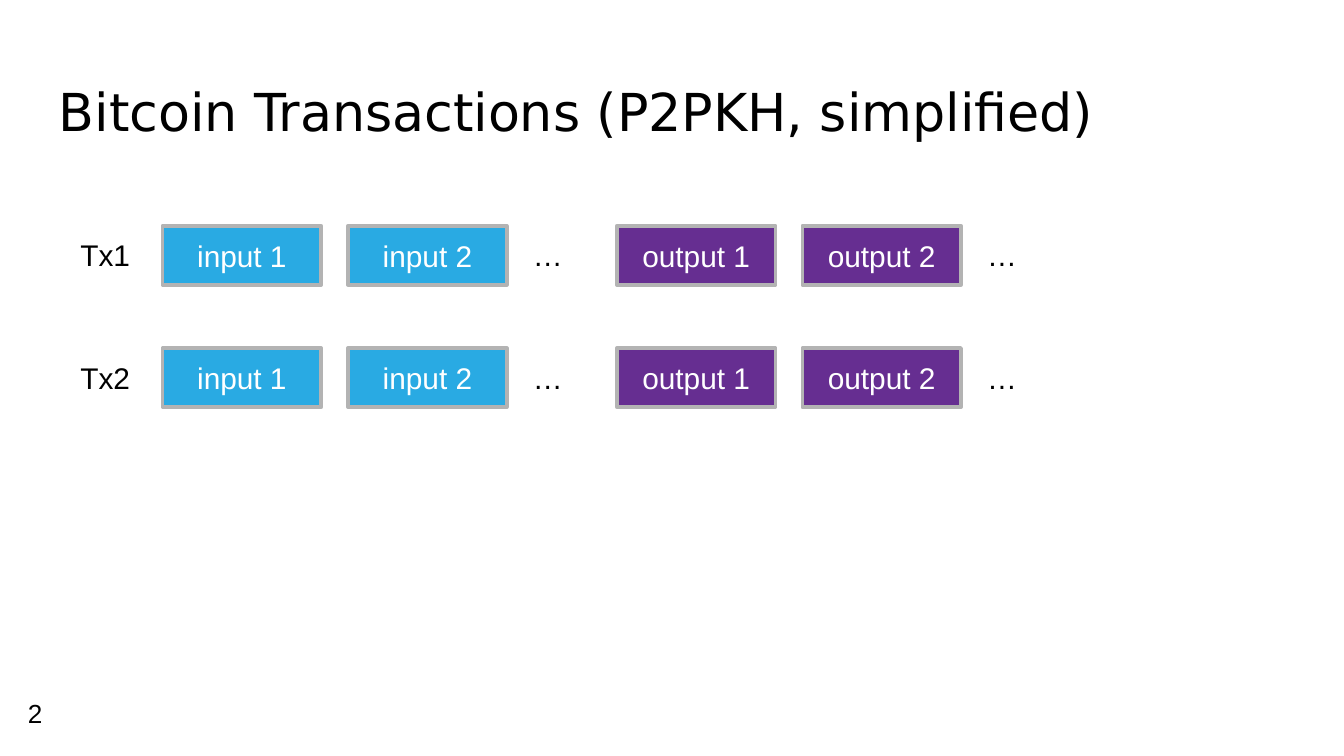
from pptx import Presentation
from pptx import util as u
from pptx.dml.color import RGBColor
from pptx.enum import shapes, text

BLACK = RGBColor(0x00, 0x00, 0x00)
WHITE = RGBColor(0xFF, 0xFF, 0xFF)
BLUE = RGBColor(0x29, 0xAA, 0xE3)
PURPLE = RGBColor(0x66, 0x2E, 0x91)
GREY = RGBColor(0xB3, 0xB3, 0xB3)

# Grid in inches: one row per transaction, one group each for inputs and outputs
ROW_TOP, ROW_STEP = 1.68, 0.91
BOX_WIDTH, BOX_HEIGHT, BOX_STEP = 1.18, 0.44, 1.38
LABEL_LEFT, LABEL_WIDTH, LABEL_HEIGHT = 0.5, 0.61, 0.37
GROUPS = [("input", 1.21, BLUE), ("output", 4.59, PURPLE)]
TRANSACTIONS = ["Tx1", "Tx2"]


def write(shape, words, size=16, font="Arial", color=BLACK,
          align=text.PP_ALIGN.LEFT, anchor=text.MSO_ANCHOR.TOP, inset=None):
    """Put one formatted paragraph into a shape."""
    frame = shape.text_frame
    frame.word_wrap = True
    frame.vertical_anchor = anchor
    if inset is not None:
        frame.margin_left = frame.margin_right = u.Inches(inset)
        frame.margin_top = frame.margin_bottom = u.Inches(inset)
    para = frame.paragraphs[0]
    para.alignment = align
    span = para.add_run()
    span.text = words
    span.font.size = u.Pt(size)
    span.font.name = font
    span.font.color.rgb = color


def add_label(page, words, left, top, width, height, **style):
    box = page.shapes.add_textbox(*map(u.Inches, (left, top, width, height)))
    write(box, words, **style)


def add_block(page, words, left, top, fill):
    block = page.shapes.add_shape(
        shapes.MSO_SHAPE.RECTANGLE,
        *map(u.Inches, (left, top, BOX_WIDTH, BOX_HEIGHT)))
    block.shadow.inherit = False
    block.fill.solid()
    block.fill.fore_color.rgb = fill
    block.line.color.rgb = GREY
    block.line.width = u.Pt(2)
    write(block, words, color=WHITE, align=text.PP_ALIGN.CENTER,
          anchor=text.MSO_ANCHOR.MIDDLE)


def add_transaction(page, name, top):
    label_top = top + (BOX_HEIGHT - LABEL_HEIGHT) / 2
    add_label(page, name, LABEL_LEFT, label_top, LABEL_WIDTH, LABEL_HEIGHT)
    for kind, left, fill in GROUPS:
        for index in range(2):
            add_block(page, f"{kind} {index + 1}", left + index * BOX_STEP,
                      top, fill)
        # The ellipsis starts where the second block ends
        add_label(page, "…", left + BOX_STEP + BOX_WIDTH, label_top,
                  LABEL_WIDTH, LABEL_HEIGHT, align=text.PP_ALIGN.CENTER)


def main():
    # Widescreen page, 16:9
    deck = Presentation()
    deck.slide_width = u.Inches(10)
    deck.slide_height = u.Inches(10 * 9 / 16)
    page = deck.slides.add_slide(deck.slide_layouts[6])

    # Title
    add_label(page, "Bitcoin Transactions (P2PKH, simplified)",
              0.34, 0.49, 9.32, 0.63, size=28, font="DejaVu Sans", inset=0.1)

    # Transactions with their inputs and outputs
    for row, name in enumerate(TRANSACTIONS):
        add_transaction(page, name, ROW_TOP + row * ROW_STEP)

    # Page number
    add_label(page, "2", 0.11, 5.09, 0.6, 0.43, size=14, inset=0.1,
              anchor=text.MSO_ANCHOR.MIDDLE)

    deck.save("out.pptx")


if __name__ == "__main__":
    main()
